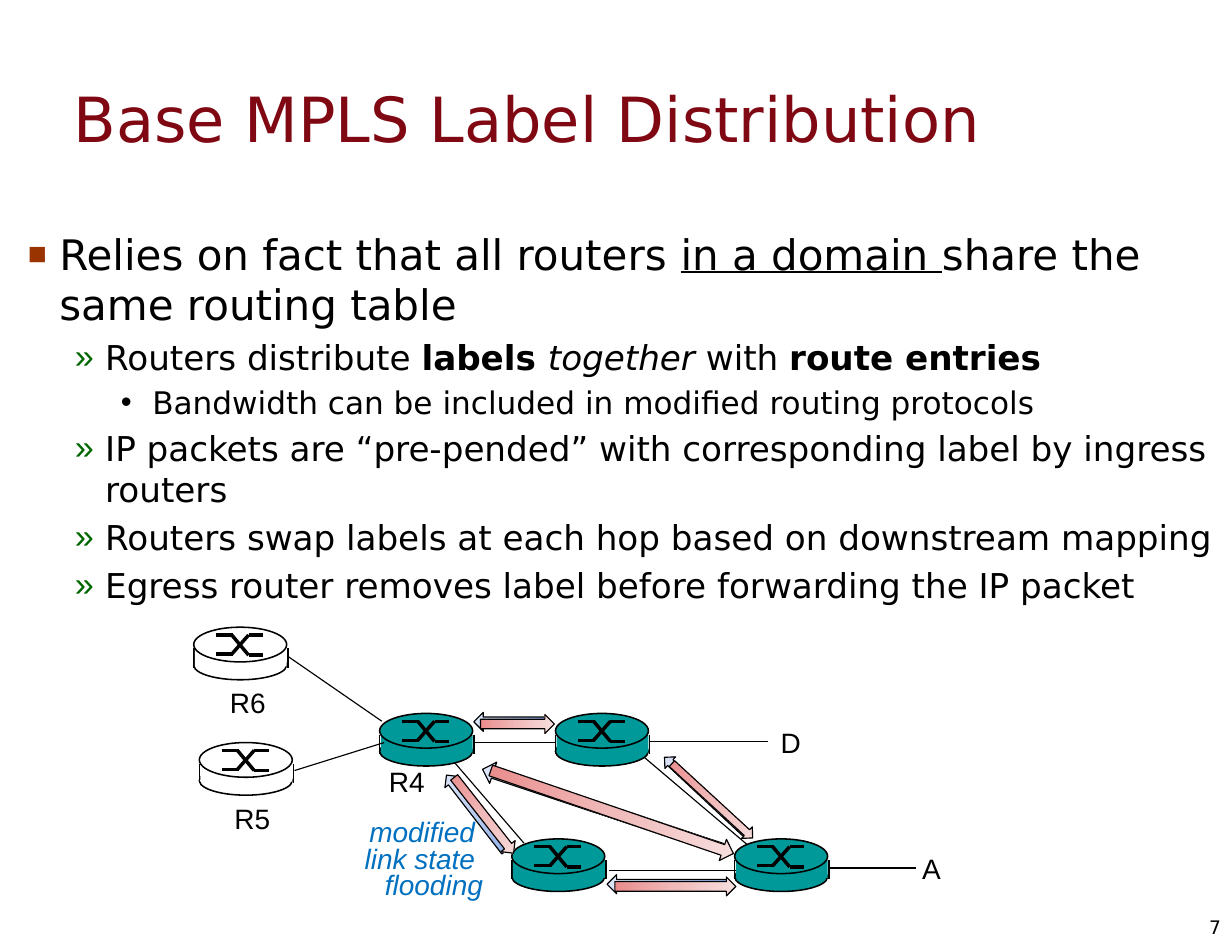
from copy import deepcopy

from lxml.etree import SubElement
from pptx import Presentation
from pptx.dml.color import RGBColor
from pptx.enum.shapes import MSO_CONNECTOR, MSO_SHAPE
from pptx.enum.text import MSO_ANCHOR, MSO_AUTO_SIZE, PP_ALIGN
from pptx.oxml.ns import qn
from pptx.util import Inches, Pt

BLACK = RGBColor(0x00, 0x00, 0x00)
WHITE = RGBColor(0xFF, 0xFF, 0xFF)
MAROON = RGBColor(0x7F, 0x08, 0x13)
TEAL = RGBColor(0x00, 0x99, 0x99)
NOTE_BLUE = RGBColor(0x00, 0x70, 0xC0)
RUST = RGBColor(0x99, 0x33, 0x00)
GREEN = RGBColor(0x00, 0x66, 0x00)
BLUES = [RGBColor(0x8C, 0xAD, 0xEA), RGBColor(0xBA, 0xCC, 0xF0), RGBColor(0xDE, 0xE6, 0xF7)]
REDS = [RGBColor(0xEA, 0x8C, 0x8C), RGBColor(0xF0, 0xBA, 0xBA), RGBColor(0xF7, 0xDE, 0xDE)]

LEVELS = [
    {"indent": (0.42, -0.28), "size": 27, "bullet": "■", "color": RUST, "scale": 75},
    {"indent": (0.83, -0.27), "size": 22, "bullet": "»", "color": GREEN, "scale": 100},
    {"indent": (1.25, -0.28), "size": 20, "bullet": "•", "color": BLACK, "scale": 100},
]
OUTLINE = [
    (0, [("Relies on fact that all routers ", ""), ("in a domain ", "underline"),
         ("share the same routing table", "")]),
    (1, [("Routers distribute ", ""), ("labels ", "bold"), ("together", "italic"),
         (" with ", ""), ("route entries", "bold")]),
    (2, [("Bandwidth can be included in modified routing protocols", "")]),
    (1, [("IP packets are “pre-pended” with corresponding label by ingress routers", "")]),
    (1, [("Routers swap labels at each hop based on downstream mapping", "")]),
    (1, [("Egress router removes label before forwarding the IP packet", "")]),
]
ROUTERS = [
    (6.56, 7.49, TEAL), (4.57, 7.49, TEAL), (4.96, 6.37, TEAL),
    (3.39, 6.37, TEAL), (1.73, 5.6, WHITE), (1.78, 6.63, WHITE),
]
CROSS = [
    (0.2, 0.07, 0.35, 0.07), (0.49, 0.25, 0.62, 0.25), (0.34, 0.07, 0.49, 0.25),
    (0.2, 0.24, 0.35, 0.24), (0.49, 0.07, 0.62, 0.07), (0.34, 0.24, 0.49, 0.07),
]
LINKS = [
    (2.57, 5.86, 3.41, 6.44), (2.63, 6.88, 3.43, 6.63), (4.23, 6.63, 4.96, 6.63),
    (4.06, 6.81, 4.68, 7.53), (5.44, 7.77, 6.57, 7.77), (5.75, 6.76, 6.67, 7.54),
    (7.41, 7.75, 8.18, 7.75), (5.8, 6.62, 6.86, 6.62),
]
LABELS = [
    ("D", 6.87, 6.43, 0.38), ("R4", 3.37, 6.78, 0.52), ("R5", 1.99, 7.11, 0.52),
    ("A", 8.13, 7.55, 0.37), ("R6", 1.95, 6.07, 0.52),
]
FLOODS = [
    (4.23, 6.36, 0.66, 0.17, 180, BLUES), (3.82, 7.18, 0.86, 0.16, 232.3, BLUES),
    (4.29, 6.38, 0.66, 0.17, 0, REDS), (3.89, 7.2, 0.86, 0.16, 51.9, REDS),
    (4.25, 7.13, 2.29, 0.2, 198.4, BLUES), (4.32, 7.15, 2.29, 0.2, 18.9, REDS),
    (5.8, 7.03, 0.99, 0.14, 223.1, BLUES), (5.87, 7.08, 0.98, 0.14, 42.6, REDS),
    (5.42, 7.81, 1.08, 0.17, 180, BLUES), (5.49, 7.83, 1.08, 0.17, 0, REDS),
]


class SlideBuilder:
    """Draws the elements of one slide in a shared style."""

    heading_font = "DejaVu Sans"
    label_font = "Arial"

    def __init__(self, slide):
        self.slide = slide

    def style(self, font, name, size, color):
        font.name, font.size = name, Pt(size)
        font.color.rgb = color

    def set_insets(self, frame):
        frame.margin_left = frame.margin_right = Inches(0.11)
        frame.margin_top = frame.margin_bottom = Inches(0.06)

    def title(self, text):
        title = self.slide.shapes.title
        title.left, title.top = Inches(0.55), Inches(0.34)
        title.width, title.height = Inches(9.9), Inches(1.42)
        frame = title.text_frame
        frame.text = text
        frame.auto_size = MSO_AUTO_SIZE.NONE
        frame.vertical_anchor = MSO_ANCHOR.MIDDLE
        self.set_insets(frame)
        frame.paragraphs[0].alignment = PP_ALIGN.LEFT
        self.style(frame.paragraphs[0].runs[0].font, self.heading_font, 40, MAROON)

    def bullet(self, paragraph, level):
        left, hanging = level["indent"]
        props = paragraph._p.get_or_add_pPr()
        props.set("marL", str(Inches(left)))
        props.set("indent", str(Inches(hanging)))
        SubElement(SubElement(props, qn("a:buClr")), qn("a:srgbClr"), val=str(level["color"]))
        SubElement(props, qn("a:buSzPct"), val=str(level["scale"] * 1000))
        SubElement(props, qn("a:buFont"), typeface=self.label_font)
        SubElement(props, qn("a:buChar"), char=level["bullet"])

    def outline(self, items):
        box = self.slide.shapes.add_textbox(0, Inches(1.98), Inches(11), Inches(6.34))
        frame = box.text_frame
        frame.word_wrap = True
        self.set_insets(frame)
        for index, (depth, pieces) in enumerate(items):
            paragraph = frame.add_paragraph() if index else frame.paragraphs[0]
            level = LEVELS[depth]
            paragraph.level = depth
            self.bullet(paragraph, level)
            if index:
                paragraph.space_before = Pt(level["size"] * 0.2)
            for text, emphasis in pieces:
                run = paragraph.add_run()
                run.text = text
                self.style(run.font, self.heading_font, level["size"], BLACK)
                if emphasis:
                    setattr(run.font, emphasis, True)

    def label(self, text, left, top, width, height=0.4, size=18, color=BLACK, font=label_font):
        box = self.slide.shapes.add_textbox(
            Inches(left), Inches(top), Inches(width), Inches(height))
        frame = box.text_frame
        frame.text = text
        frame.word_wrap = False
        for paragraph in frame.paragraphs:
            paragraph.alignment = PP_ALIGN.RIGHT
            self.style(paragraph.runs[0].font, font, size, color)
        return frame

    def note(self, text, left, top, width, height):
        frame = self.label(text, left, top, width, height, color=NOTE_BLUE)
        frame.word_wrap = True
        for paragraph in frame.paragraphs:
            paragraph.line_spacing = Pt(17)
            paragraph.runs[0].font.italic = True

    def line(self, x1, y1, x2, y2, weight=0.75, shapes=None):
        link = (shapes or self.slide.shapes).add_connector(
            MSO_CONNECTOR.STRAIGHT, Inches(x1), Inches(y1), Inches(x2), Inches(y2))
        link.line.color.rgb = BLACK
        link.line.width = Pt(weight)
        SubElement(link._element.spPr, qn("a:effectLst"))

    def solid(self, shapes, kind, left, top, width, height, fill, outlined=True):
        part = shapes.add_shape(kind, Inches(left), Inches(top), Inches(width), Inches(height))
        part.shadow.inherit = False
        part.fill.solid()
        part.fill.fore_color.rgb = fill
        if outlined:
            part.line.color.rgb = BLACK
            part.line.width = Pt(1)
        else:
            part.line.fill.background()

    def router(self, x, y, fill):
        parts = self.slide.shapes.add_group_shape().shapes
        self.solid(parts, MSO_SHAPE.OVAL, x, y + 0.21, 0.83, 0.26, fill)
        for side in (x, x + 0.84):
            self.line(side, y + 0.19, side, y + 0.36, 1, parts)
        self.solid(parts, MSO_SHAPE.RECTANGLE, x + 0.01, y + 0.19, 0.82, 0.16, fill, False)
        self.solid(parts, MSO_SHAPE.OVAL, x, y, 0.83, 0.31, fill)
        for x1, y1, x2, y2 in CROSS:
            self.line(x + x1, y + y1, x + x2, y + y2, 2.25, parts)

    def flood(self, left, top, width, height, angle, colors):
        arrow = self.slide.shapes.add_shape(
            MSO_SHAPE.RIGHT_ARROW, Inches(left), Inches(top), Inches(width), Inches(height))
        arrow.rotation = angle
        arrow.shadow.inherit = False
        arrow.line.color.rgb = BLACK
        arrow.line.width = Pt(0.75)
        arrow.fill.gradient()
        arrow.fill.gradient_angle = 0
        stops = arrow._element.spPr.find(".//" + qn("a:gsLst"))
        stops.append(deepcopy(stops[0]))
        for stop, color, position in zip(arrow.fill.gradient_stops, colors, (0, 0.5, 1)):
            stop.color.rgb = color
            stop.position = position


def main():
    deck = Presentation()
    deck.slide_width, deck.slide_height = Inches(11), Inches(8.5)
    builder = SlideBuilder(deck.slides.add_slide(deck.slide_layouts[5]))
    number = builder.label("7", 10.53, 8.05, 0.47, 0.45, 12, font=builder.heading_font)
    number.word_wrap = True
    number.vertical_anchor = MSO_ANCHOR.MIDDLE
    builder.title("Base MPLS Label Distribution")
    builder.outline(OUTLINE)
    for router in ROUTERS:
        builder.router(*router)
    for link in LINKS:
        builder.line(*link)
    for label in LABELS:
        builder.label(*label)
    builder.note("modified \nlink state \nflooding", 3.14, 7.29, 1.27, 0.82)
    for flood in FLOODS:
        builder.flood(*flood)
    deck.save("out.pptx")


if __name__ == "__main__":
    main()
